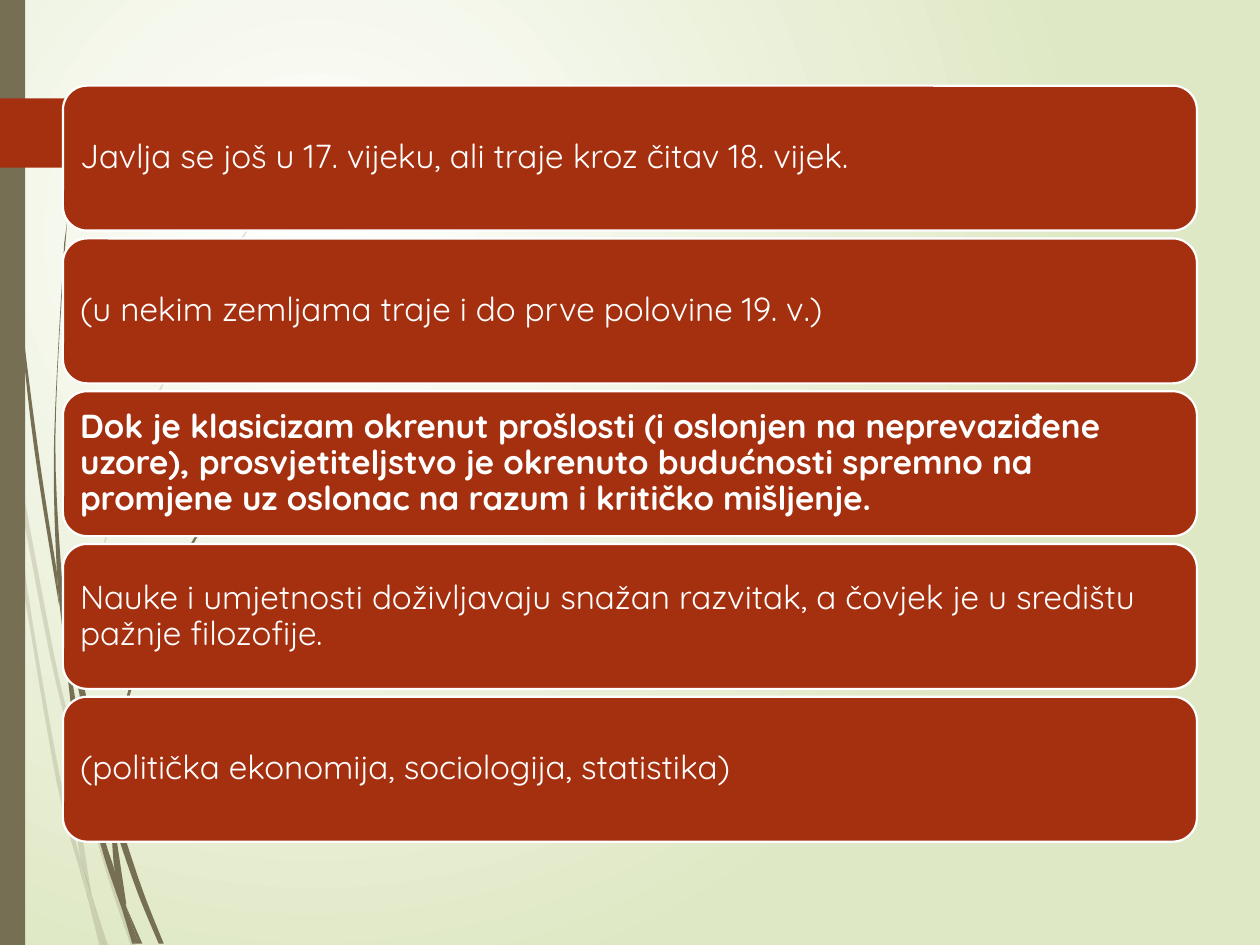
import pptx
import pptx.util
import pptx.dml.color
import pptx.enum.shapes
import pptx.enum.text
import pptx.oxml
import pptx.oxml.ns

Inches = pptx.util.Inches
qn = pptx.oxml.ns.qn
OLIVE, RUST, WHITE, PALE = "766F54", "A53010", "FFFFFF", "DFE8C4"

FAINT_BLADES = [
    ([(0, 2.82), (0.06, 3.22), (0.08, 3.5)], [(0.07, 3.44), (0, 2.99)]),
    ([(0.1, 3.45), (0.43, 5.2), (0.59, 5.86)], [(0.59, 5.99), (0.4, 5.22), (0.12, 3.76)]),
    ([(0.61, 5.96), (0.64, 6.07), (0.88, 6.92), (1.08, 7.51)],
     [(1.04, 7.51), (0.85, 6.94), (0.61, 6.1)]),
    ([(0.73, 7.11), (0.86, 7.51)], [(0.83, 7.51)]),
    ([(0.08, 3.5), (0.12, 3.76), (0.22, 4.69), (0.48, 6.19), (0.64, 6.83), (0.7, 7.14)],
     [(0.64, 6.93), (0.45, 6.21), (0.19, 4.7)]),
    ([(0.58, 5.99), (0.6, 6.46), (0.64, 6.83), (0.73, 7.11)],
     [(0.72, 7.06), (0.63, 6.46), (0.61, 6.1)]),
    ([(0.61, 5.96), (0.61, 5.84), (0.76, 4.62), (1.11, 3.49), (1.59, 2.45), (1.87, 1.98), (2.17, 1.54)],
     [(2.17, 1.53), (1.86, 1.97), (1.58, 2.44), (1.1, 3.48), (0.75, 4.61), (0.59, 5.84)]),
    ([(0.7, 7.14), (0.79, 7.51)], [(0.82, 7.51)]),
    ([(0.65, 6.83), (0.69, 7.07), (0.7, 7.14), (0.82, 7.51)],
     [(0.83, 7.51), (0.73, 7.11), (0.67, 6.92)]),
]
DARK_BLADES = [
    ([(0.02, 0), (0.05, 1.1), (0.14, 2.33), (0.27, 3.55), (0.47, 4.81)],
     [(0.45, 4.53), (0.3, 3.55), (0.15, 2.32), (0.06, 1.09), (0.03, 0)]),
    ([(0.5, 4.72), (0.53, 5.05), (0.73, 5.92), (0.88, 6.45)], [(0.88, 6.31), (0.77, 5.9)]),
    ([(0.91, 6.41), (0.94, 6.49), (1.13, 7.06), (1.3, 7.49)],
     [(1.26, 7.49), (1.09, 7.08), (0.91, 6.56)]),
    ([(0.47, 4.77), (0.53, 5.05), (0.6, 5.56), (0.81, 6.57), (0.91, 6.91), (0.97, 7.22)],
     [(0.92, 7.08), (0.77, 6.59), (0.56, 5.57)]),
    ([(0.58, 1.41), (0.52, 1.93), (0.44, 3.49), (0.5, 4.72)],
     [(0.49, 4.72), (0.45, 4.49), (0.43, 3.49), (0.51, 1.93)]),
    ([(1, 7.19), (1.13, 7.49)], [(1.1, 7.49)]),
    ([(0.45, 4.49), (0.47, 4.77), (0.53, 5.05)], [(0.5, 4.72), (0.49, 4.72)]),
    ([(0.91, 6.41), (0.91, 6.33), (1.03, 5.52), (1.31, 4.76), (1.69, 4.06), (2.16, 3.44)],
     [(2.15, 3.44), (1.68, 4.05), (1.29, 4.74), (1.01, 5.51), (0.88, 6.31)]),
    ([(0.97, 7.22), (1.05, 7.49)], [(1.08, 7.49)]),
    ([(0.88, 6.45), (0.91, 6.91), (1, 7.19)], [(1, 7.16), (0.91, 6.56)]),
    ([(0.91, 6.91), (0.97, 7.22), (1.08, 7.49)], [(1.1, 7.49), (1, 7.19), (0.96, 7.06)]),
]
TAB = [(0, 0.78), (1.21, 0.78), (1.24, 0.79), (1.49, 1.04),
       (1.49, 1.07), (1.24, 1.32), (1.21, 1.33), (0, 1.33)]
STATEMENTS = [
    ("Javlja se još u 17. vijeku, ali traje kroz čitav 18. vijek.", False),
    ("(u nekim zemljama traje i do prve polovine 19. v.)", False),
    ("Dok je klasicizam okrenut prošlosti (i oslonjen na neprevaziđene uzore), "
     "prosvjetiteljstvo je okrenuto budućnosti spremno na promjene uz oslonac na "
     "razum i kritičko mišljenje.", True),
    ("Nauke i umjetnosti doživljavaju snažan razvitak, a čovjek je u središtu "
     "pažnje filozofije.", False),
    ("(politička ekonomija, sociologija, statistika)", False),
]


def rgb(value):
    return pptx.dml.color.RGBColor.from_string(value)


def apply(target, values):
    for name, value in values.items():
        setattr(target, name, value)


def paint(shape, fill, line=None, opacity=None):
    shape.shadow.inherit = False
    shape.fill.solid()
    shape.fill.fore_color.rgb = rgb(fill)
    if opacity:
        color = shape.element.spPr.find(qn("a:solidFill")).find(qn("a:srgbClr"))
        color.makeelement(qn("a:alpha"), {})
        alpha = pptx.oxml.parse_xml(
            f'<a:alpha {pptx.oxml.ns.nsdecls("a")} val="{opacity * 1000}"/>')
        color.append(alpha)
    if line:
        shape.line.color.rgb = rgb(line)
        shape.line.width = pptx.util.Pt(1.25)
    else:
        shape.line.fill.background()


def smooth_edge(points, steps=6):
    padded = [points[0], *points, points[-1]]
    curve = [points[0]]
    for a, b, c, d in zip(padded, padded[1:], padded[2:], padded[3:]):
        for step in range(1, steps + 1):
            t = step / steps
            curve.append(tuple(
                q + t / 2 * (r - p + t * (2 * p - 5 * q + 4 * r - s + t * (3 * (q - r) + s - p)))
                for p, q, r, s in zip(a, b, c, d)))
    return curve


def add_outline(page, points, fill, opacity=None):
    corners = [(Inches(x), Inches(y)) for x, y in points]
    builder = page.shapes.build_freeform(*corners[0])
    builder.add_line_segments(corners[1:], close=True)
    paint(builder.convert_to_shape(), fill, opacity=opacity)


def add_blades(page, blades, opacity=None):
    for outward, back in blades:
        add_outline(page, smooth_edge(outward) + smooth_edge(back), OLIVE, opacity)


def add_block(page, kind, left, top, width, height, fill, line=None):
    box = page.shapes.add_shape(kind, Inches(left), Inches(top), Inches(width), Inches(height))
    paint(box, fill, line)
    return box


def add_statement(page, top, text, bold):
    kind = pptx.enum.shapes.MSO_SHAPE.ROUNDED_RECTANGLE
    frame = add_block(page, kind, 0.5, top, 9, 1.15, RUST, WHITE).text_frame
    margins = {f"margin_{side}": Inches(0.08) for side in ("left", "top", "right", "bottom")}
    apply(frame, {"word_wrap": True,
                  "vertical_anchor": pptx.enum.text.MSO_ANCHOR.MIDDLE, **margins})
    para = frame.paragraphs[0]
    apply(para, {"alignment": pptx.enum.text.PP_ALIGN.LEFT, "line_spacing": 0.9})
    span = para.add_run()
    span.text = text
    apply(span.font, {"name": "Quicksand", "size": pptx.util.Pt(19), "bold": bold})
    span.font.color.rgb = rgb(WHITE)


def set_background(page):
    fill = page.background.fill
    fill.gradient()
    for stop, color, position in zip(fill.gradient_stops, (WHITE, PALE), (0, 1)):
        stop.color.rgb = rgb(color)
        stop.position = position
    gradient = next(page.element.iter(qn("a:gradFill")))
    radial = pptx.oxml.parse_xml(
        f'<a:path {pptx.oxml.ns.nsdecls("a")} path="circle">'
        '<a:fillToRect l="50000" t="50000" r="100000" b="100000"/></a:path>')
    gradient.replace(gradient.find(qn("a:lin")), radial)


def main():
    deck = pptx.Presentation()
    apply(deck, {"slide_width": Inches(10), "slide_height": Inches(7.5)})
    page = deck.slides.add_slide(deck.slide_layouts[6])
    set_background(page)
    add_blades(page, FAINT_BLADES, opacity=20)
    add_blades(page, DARK_BLADES)
    add_block(page, pptx.enum.shapes.MSO_SHAPE.RECTANGLE, 0, 0, 0.2, 7.5, OLIVE)
    add_outline(page, TAB, RUST)
    pitch = (5.53 - 0.68) / (len(STATEMENTS) - 1)
    for index, (text, bold) in enumerate(STATEMENTS):
        add_statement(page, 0.68 + index * pitch, text, bold)
    deck.save("out.pptx")


if __name__ == "__main__":
    main()
